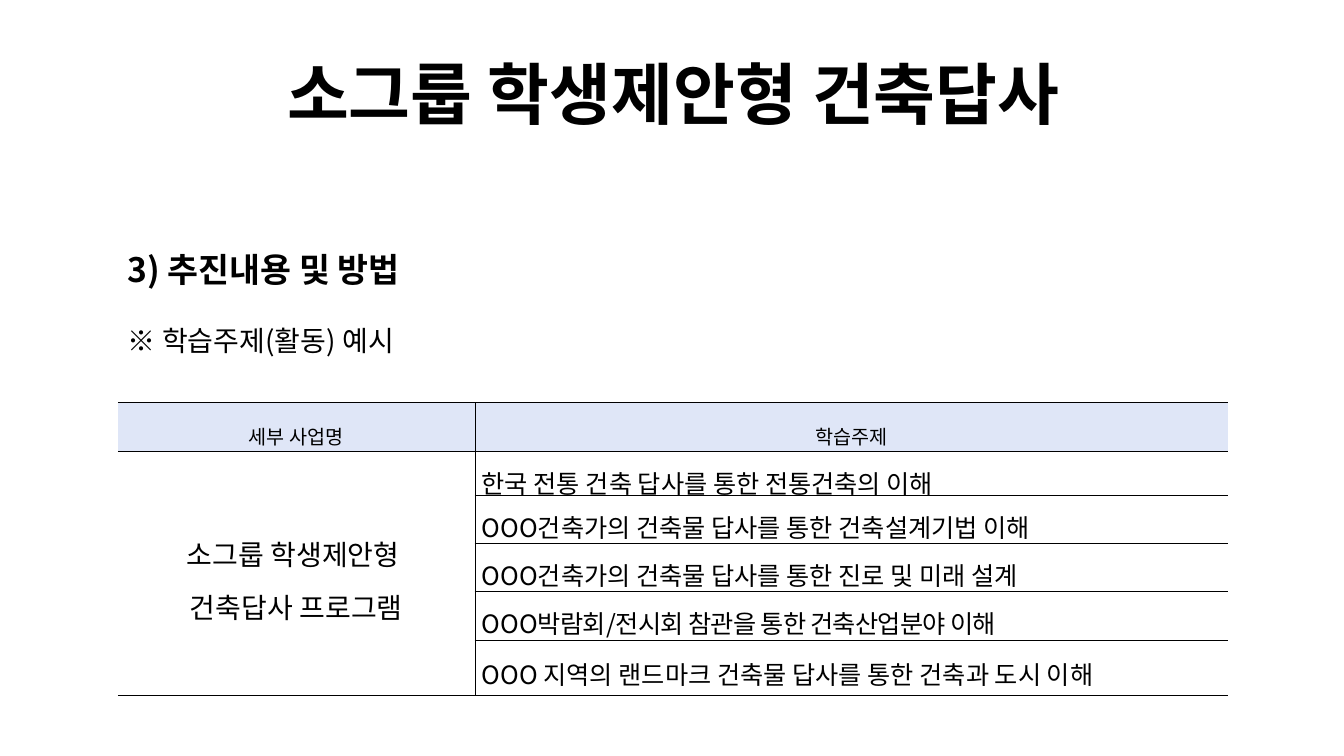
from dataclasses import dataclass

from lxml import etree
from pptx import Presentation, util as u
from pptx.dml.color import RGBColor
from pptx.enum import text as t
from pptx.oxml.ns import qn


@dataclass(frozen=True)
class Theme:
    face: str = "Noto Sans CJK KR"
    ink: str = "000000"
    head: str = "DFE6F7"
    title: int = 48
    sub: int = 24
    note: int = 20
    topic: int = 18
    label: int = 14
    rule: float = 0.28


THEME = Theme()
WIDE, HIGH = u.Inches(13.33), u.Inches(7.5)
COLS, ROWS = 160, 90
LEFT, SPAN = 14.04, 132.12
CENTER, JUSTIFY = t.PP_ALIGN.CENTER, t.PP_ALIGN.JUSTIFY

TOPICS = [
    ["한국 전통 건축 답사를 통한 전통건축의 이해"],
    ["OOO건축가의 건축물 답사를 통한 건축설계기법 이해"],
    ["OOO건축가의 건축물 답사를 통한 진로 및 미래 설계"],
    ["OOO", "박람회/전시회 참관을 통한 건축산업분야 이해"],
    ["OOO 지역의 랜드마크 건축물 답사를 통한 건축과 도시 이해"],
]


def col(n):
    return round(WIDE * n / COLS)


def row(n):
    return round(HIGH * n / ROWS)


def style(run, size, bold=False):
    font = run.font
    font.name, font.size, font.bold = THEME.face, u.Pt(size), bold
    font.color.rgb = RGBColor.from_string(THEME.ink)
    props = run._r.get_or_add_rPr()
    etree.SubElement(props, qn("a:ea")).set("typeface", THEME.face)


def write(para, parts, size, line, bold=False, align=None):
    """Fill a paragraph with one run per part; later parts are set tighter."""
    para.alignment, para.line_spacing = align, line
    for i, part in enumerate(parts):
        run = para.add_run()
        run.text = part
        style(run, size, bold)
        if i:
            run._r.get_or_add_rPr().set("spc", "-50")


def box(slide, x, y, w, h, anchor=t.MSO_ANCHOR.TOP):
    frame = slide.shapes.add_textbox(col(x), row(y), col(w), row(h)).text_frame
    frame.word_wrap, frame.vertical_anchor = True, anchor
    return frame


def border(cell, sides):
    """Rule the named sides (of L, R, T, B) and clear the others."""
    props = cell._tc.get_or_add_tcPr()
    for side in "LRTB":
        line = etree.SubElement(props, qn(f"a:ln{side}"))
        if side in sides:
            line.set("w", str(u.Pt(THEME.rule)))
            fill = etree.SubElement(line, qn("a:solidFill"))
            etree.SubElement(fill, qn("a:srgbClr")).set("val", THEME.ink)
        else:
            etree.SubElement(line, qn("a:noFill"))


def dress(cell, sides, head):
    cell.margin_left = cell.margin_right = u.Inches(0.07)
    cell.margin_top = cell.margin_bottom = u.Inches(0.02)
    cell.vertical_anchor = t.MSO_ANCHOR.MIDDLE
    border(cell, sides)
    if head:
        cell.fill.solid()
        cell.fill.fore_color.rgb = RGBColor.from_string(THEME.head)
    else:
        cell.fill.background()


def grid(slide, x, y, widths, heights):
    table = slide.shapes.add_table(
        len(heights), len(widths), col(x), row(y),
        col(sum(widths)), row(sum(heights))).table
    table.first_row = table.horz_banding = False
    for item, w in zip(table.columns, widths):
        item.width = col(w)
    for item, h in zip(table.rows, heights):
        item.height = row(h)
    for r in range(len(heights)):
        for c, sides in enumerate(("RTB", "LTB")):
            dress(table.cell(r, c), sides, r == 0)
    return table


def fill(table):
    for c, name in enumerate(("세부 사업명", "학습주제")):
        para = table.cell(0, c).text_frame.paragraphs[0]
        write(para, [name], THEME.label, 1.6, align=CENTER)
    for r, parts in enumerate(TOPICS, 1):
        para = table.cell(r, 1).text_frame.paragraphs[0]
        write(para, parts, THEME.topic, 1.3, align=JUSTIFY)
    group = table.cell(1, 0)
    group.merge(table.cell(len(TOPICS), 0))
    frame = group.text_frame
    write(frame.paragraphs[0], ["소그룹 학생제안형 "], THEME.note, 1.3, align=CENTER)
    write(frame.add_paragraph(), ["건축답사 프로그램"], THEME.note, 1.3, align=CENTER)


def main():
    deck = Presentation()
    deck.slide_width, deck.slide_height = WIDE, HIGH
    slide = deck.slides.add_slide(deck.slide_layouts[6])

    body = box(slide, LEFT, 26.16, SPAN, 56.4)
    first, second = body.paragraphs[0], body.add_paragraph()
    write(first, ["3) 추진내용 및 방법"], THEME.sub, 1.6, bold=True)
    write(second, ["※ 학습주제(활동) 예시"], THEME.note, 1.6)
    first.space_before = second.space_before = u.Pt(10)

    heights = [5.88, 5.16, 5.76, 5.76, 5.76, 6.6]
    fill(grid(slide, LEFT, 47.88, [42.48, SPAN - 42.48], heights))

    title = box(slide, 20.16, 3.48, 120, 13.08, t.MSO_ANCHOR.BOTTOM)
    write(title.paragraphs[0], ["소그룹 학생제안형 건축답사"],
          THEME.title, 0.9, bold=True, align=CENTER)

    deck.save("out.pptx")


if __name__ == "__main__":
    main()
